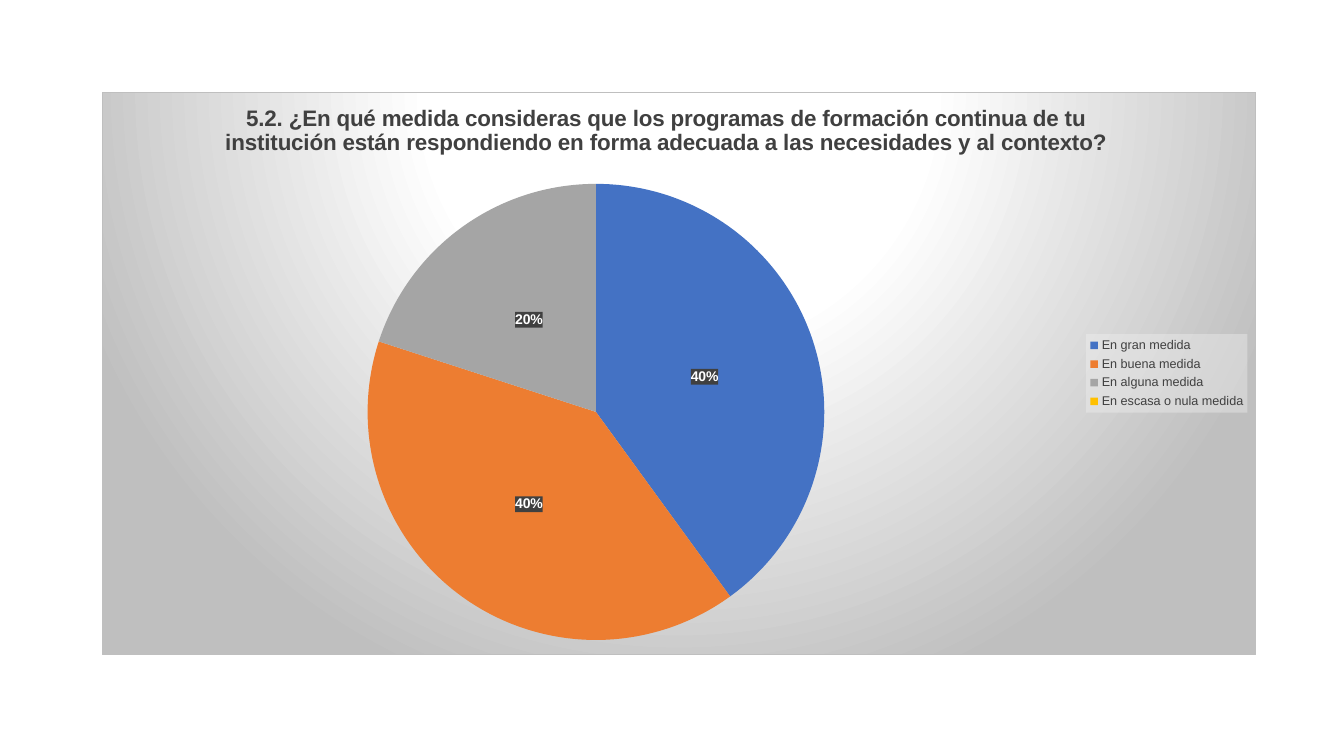
from dataclasses import dataclass

from lxml.etree import SubElement
from pptx import Presentation
from pptx.chart.data import CategoryChartData
from pptx.dml.color import RGBColor
from pptx.enum.chart import XL_CHART_TYPE, XL_LABEL_POSITION, XL_LEGEND_POSITION
from pptx.oxml import parse_xml
from pptx.oxml.ns import nsdecls, qn
from pptx.util import Inches, Pt

QUESTION = (
    "5.2. ¿En qué medida consideras que los programas de formación continua de tu "
    "institución están respondiendo en forma adecuada a las necesidades y al contexto?"
)
ANSWERS = {
    "En gran medida": 40,
    "En buena medida": 40,
    "En alguna medida": 20,
    "En escasa o nula medida": 0,
}


@dataclass(frozen=True)
class Theme:
    font: str = "Arial"
    text: str = "404040"
    label_text: str = "FFFFFF"
    label_fill: str = "404040"
    legend_fill: str = "F2F2F2"
    center: str = "FFFFFF"
    edge: str = "BFBFBF"
    slices: tuple = ("4472C4", "ED7D31", "A5A5A5", "FFC000")
    title_size: int = 16
    label_size: int = 10
    legend_size: int = 9


class SurveySlide:
    """Draws survey charts on one slide in a shared style."""

    def __init__(self, slide, theme):
        self.slide = slide
        self.theme = theme

    def style_font(self, font, size, color, bold=False):
        font.name = self.theme.font
        font.size = Pt(size)
        font.bold = bold
        font.color.rgb = RGBColor.from_string(color)

    def set_backing(self, element, fill, line="<a:ln><a:noFill/></a:ln>"):
        properties = parse_xml(
            f"<c:spPr {nsdecls('c', 'a')}>{fill}{line}</c:spPr>"
        )
        element.find(qn("c:txPr")).addprevious(properties)

    def translucent(self, color, percent):
        return (
            f'<a:solidFill><a:srgbClr val="{color}">'
            f'<a:alpha val="{percent * 1000}"/></a:srgbClr></a:solidFill>'
        )

    def set_layout(self, element, follower, **values):
        for layout in element.findall(qn("c:layout")):
            element.remove(layout)
        layout = parse_xml(f"<c:layout {nsdecls('c')}/>")
        manual = SubElement(layout, qn("c:manualLayout"))
        for name, value in values.items():
            SubElement(manual, qn(f"c:{name}")).set("val", str(value))
        element.find(qn(follower)).addprevious(layout)

    def add_pie(self, question, answers, left, top, width, height):
        data = CategoryChartData()
        data.categories = answers.keys()
        data.add_series("Series 1", answers.values())
        frame = self.slide.shapes.add_chart(
            XL_CHART_TYPE.PIE, left, top, width, height, data
        )
        chart = frame.chart
        self.style_font(chart.font, self.theme.label_size, "000000")
        self.add_background(chart)
        self.add_title(chart, question)
        self.add_legend(chart)
        self.color_slices(chart)
        self.add_labels(chart, list(answers.values()))
        self.set_layout(
            chart.plots[0]._element.getparent(), "c:pieChart",
            layoutTarget="inner", xMode="edge", yMode="edge",
            x=0.23, y=0.163, w=0.396, h=0.811,
        )

    def add_background(self, chart):
        center, edge = self.theme.center, self.theme.edge
        stops = "".join(
            f'<a:gs pos="{position * 1000}"><a:srgbClr val="{color}"/></a:gs>'
            for position, color in ((0, center), (39, center), (100, edge))
        )
        fill = (
            f'<a:gradFill><a:gsLst>{stops}</a:gsLst><a:path path="circle">'
            '<a:fillToRect l="50000" t="-80000" r="50000" b="180000"/>'
            "</a:path></a:gradFill>"
        )
        line = (
            f'<a:ln w="{Pt(0.75)}"><a:solidFill><a:srgbClr val="{edge}"/>'
            "</a:solidFill></a:ln>"
        )
        self.set_backing(chart._chartSpace, fill, line)

    def add_title(self, chart, question):
        chart.has_title = True
        title = chart.chart_title
        title.include_in_layout = False
        paragraph = title.text_frame.paragraphs[0]
        paragraph.text = question
        self.style_font(
            paragraph.font, self.theme.title_size, self.theme.text, bold=True
        )
        self.set_layout(
            title._element, "c:overlay",
            xMode="edge", yMode="edge", x=0.103, y=0.013,
        )

    def add_legend(self, chart):
        chart.has_legend = True
        legend = chart.legend
        legend.position = XL_LEGEND_POSITION.RIGHT
        legend.include_in_layout = False
        self.style_font(legend.font, self.theme.legend_size, self.theme.text)
        self.set_backing(
            legend._element, self.translucent(self.theme.legend_fill, 39)
        )

    def color_slices(self, chart):
        plot = chart.plots[0]
        plot.vary_by_categories = True
        for index, color in enumerate(self.theme.slices):
            slice_format = plot.series[0].points[index].format
            slice_format.fill.solid()
            slice_format.fill.fore_color.rgb = RGBColor.from_string(color)
            slice_format.line.fill.background()

    def add_labels(self, chart, values):
        labels = chart.plots[0].series[0].data_labels
        labels.show_percentage = True
        labels.show_value = False
        labels.number_format = "0%"
        labels.number_format_is_linked = False
        labels.position = XL_LABEL_POSITION.CENTER
        self.style_font(
            labels.font, self.theme.label_size, self.theme.label_text, bold=True
        )
        self.set_backing(
            labels._element, self.translucent(self.theme.label_fill, 75)
        )
        empty = [index for index, value in enumerate(values) if value == 0]
        for position, index in enumerate(empty):
            hidden = parse_xml(
                f'<c:dLbl {nsdecls("c")}><c:idx val="{index}"/>'
                '<c:delete val="1"/></c:dLbl>'
            )
            labels._element.insert(position, hidden)


def main():
    presentation = Presentation()
    presentation.slide_width = Inches(13.33)
    presentation.slide_height = Inches(7.5)
    slide = presentation.slides.add_slide(presentation.slide_layouts[6])
    survey = SurveySlide(slide, Theme())
    survey.add_pie(
        QUESTION, ANSWERS, Inches(1.01), Inches(0.91), Inches(11.45), Inches(5.59)
    )
    presentation.save("out.pptx")


if __name__ == "__main__":
    main()
